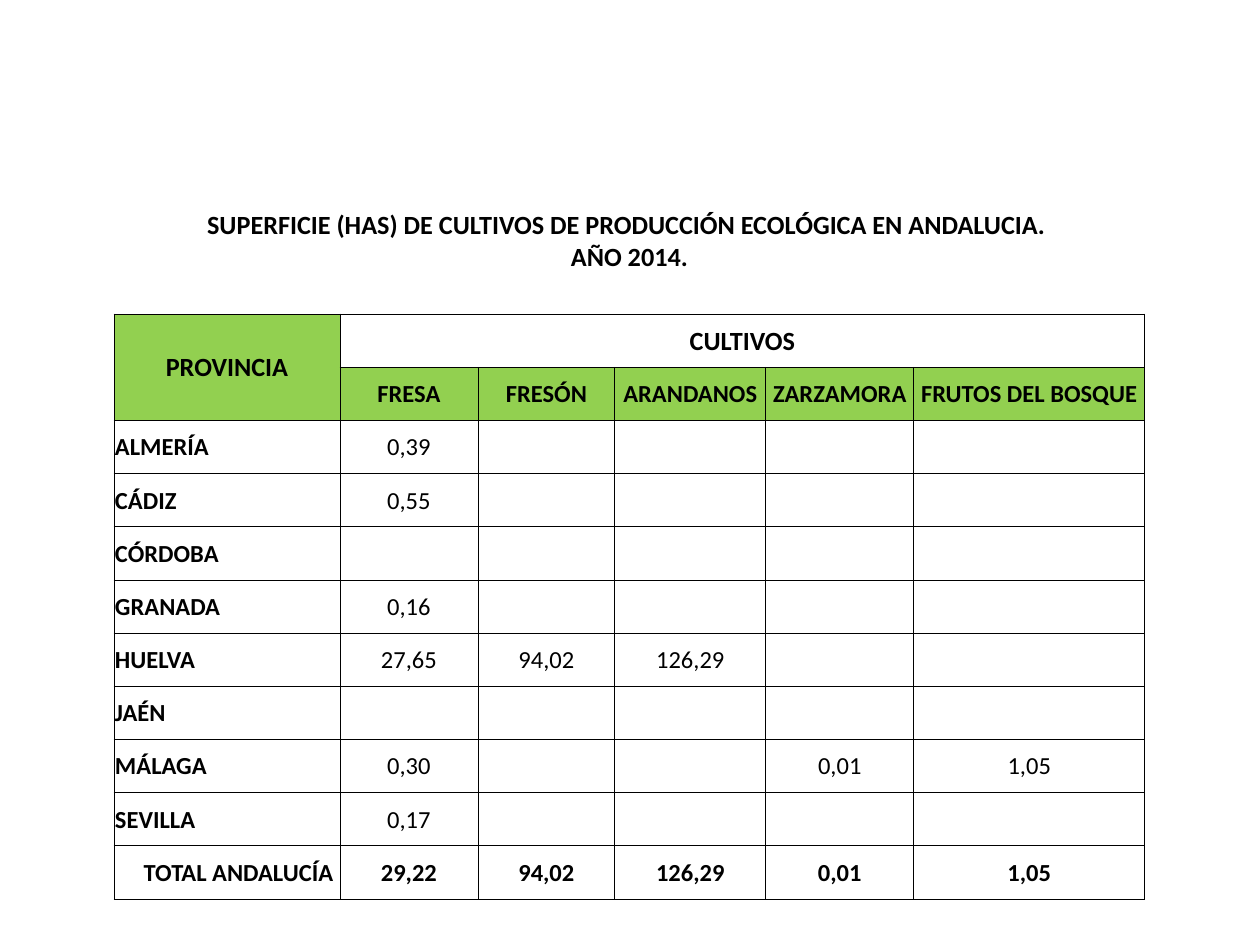
from lxml import etree
from pptx import Presentation
from pptx.dml.color import RGBColor
from pptx.enum.text import MSO_ANCHOR, PP_ALIGN
from pptx.oxml.ns import qn
from pptx.util import Emu, Pt

CENTER, LEFT, RIGHT = PP_ALIGN.CENTER, PP_ALIGN.LEFT, PP_ALIGN.RIGHT
MIDDLE = MSO_ANCHOR.MIDDLE

TITLE = "SUPERFICIE (HAS) DE CULTIVOS DE PRODUCCIÓN ECOLÓGICA EN ANDALUCIA. \vAÑO 2014."
ROWS = [
    ["PROVINCIA", "CULTIVOS", "", "", "", ""],
    ["", "FRESA", "FRESÓN", "ARANDANOS", "ZARZAMORA", "FRUTOS DEL BOSQUE"],
    ["ALMERÍA", "0,39", "", "", "", ""],
    ["CÁDIZ", "0,55", "", "", "", ""],
    ["CÓRDOBA", "", "", "", "", ""],
    ["GRANADA", "0,16", "", "", "", ""],
    ["HUELVA", "27,65", "94,02", "126,29", "", ""],
    ["JAÉN", "", "", "", "", ""],
    ["MÁLAGA", "0,30", "", "", "0,01", "1,05"],
    ["SEVILLA", "0,17", "", "", "", ""],
    ["TOTAL ANDALUCÍA ", "29,22", "94,02", "126,29", "0,01", "1,05"],
]
COLUMN_WIDTHS = [226, 138, 137, 151, 148, 231]
TABLE_LEFT, TABLE_TOP, TABLE_HEIGHT = 114, 314, 585
TITLE_TOP, TITLE_HEIGHT = 185, 110
COLORS = {"text": "000000", "border": "000000", "header": "92D050", "plain": "FFFFFF"}
LAST_ROW = len(ROWS) - 1


def px(value):
    return Emu(round(value * 914400 / 126))


def style_paragraph(paragraph, size, bold, alignment):
    paragraph.alignment = alignment
    font = paragraph.font
    font.name = "Calibri"
    font.size = Pt(size)
    font.bold = bold
    font.color.rgb = RGBColor.from_string(COLORS["text"])


def add_borders(cell):
    properties = cell._tc.get_or_add_tcPr()
    for side in ("a:lnL", "a:lnR", "a:lnT", "a:lnB"):
        line = etree.SubElement(properties, qn(side), w=str(Pt(0.5)))
        fill = etree.SubElement(line, qn("a:solidFill"))
        etree.SubElement(fill, qn("a:srgbClr"), val=COLORS["border"])


def fill_cell(cell, text, row, column):
    cell.margin_left = cell.margin_right = cell.margin_top = px(1)
    cell.margin_bottom = 0
    cell.vertical_anchor = MIDDLE
    add_borders(cell)
    is_header = row == 1 or (row == 0 and column == 0)
    cell.fill.solid()
    cell.fill.fore_color.rgb = RGBColor.from_string(COLORS["header" if is_header else "plain"])
    cell.text = text
    alignment = CENTER
    if column == 0 and row > 1:
        alignment = RIGHT if row == LAST_ROW else LEFT
    bold = row < 2 or row == LAST_ROW or column == 0
    style_paragraph(cell.text_frame.paragraphs[0], 15 if row == 0 else 14, bold, alignment)


def add_title(slide):
    box = slide.shapes.add_textbox(
        px(TABLE_LEFT), px(TITLE_TOP), px(sum(COLUMN_WIDTHS)), px(TITLE_HEIGHT)
    )
    frame = box.text_frame
    frame.word_wrap = True
    frame.vertical_anchor = MIDDLE
    frame.text = TITLE
    style_paragraph(frame.paragraphs[0], 15, True, CENTER)


def add_crop_table(slide):
    table = slide.shapes.add_table(
        len(ROWS), len(COLUMN_WIDTHS), px(TABLE_LEFT), px(TABLE_TOP),
        px(sum(COLUMN_WIDTHS)), px(TABLE_HEIGHT)
    ).table
    table.first_row = table.horz_banding = False
    for column, width in zip(table.columns, COLUMN_WIDTHS):
        column.width = px(width)
    for row_index, texts in enumerate(ROWS):
        table.rows[row_index].height = px(TABLE_HEIGHT / len(ROWS))
        for column_index, text in enumerate(texts):
            fill_cell(table.cell(row_index, column_index), text, row_index, column_index)
    table.cell(0, 0).merge(table.cell(1, 0))
    table.cell(0, 1).merge(table.cell(0, len(COLUMN_WIDTHS) - 1))


def main():
    presentation = Presentation()
    presentation.slide_width, presentation.slide_height = px(1260), px(945)
    slide = presentation.slides.add_slide(presentation.slide_layouts[6])
    add_title(slide)
    add_crop_table(slide)
    presentation.save("out.pptx")


if __name__ == "__main__":
    main()
